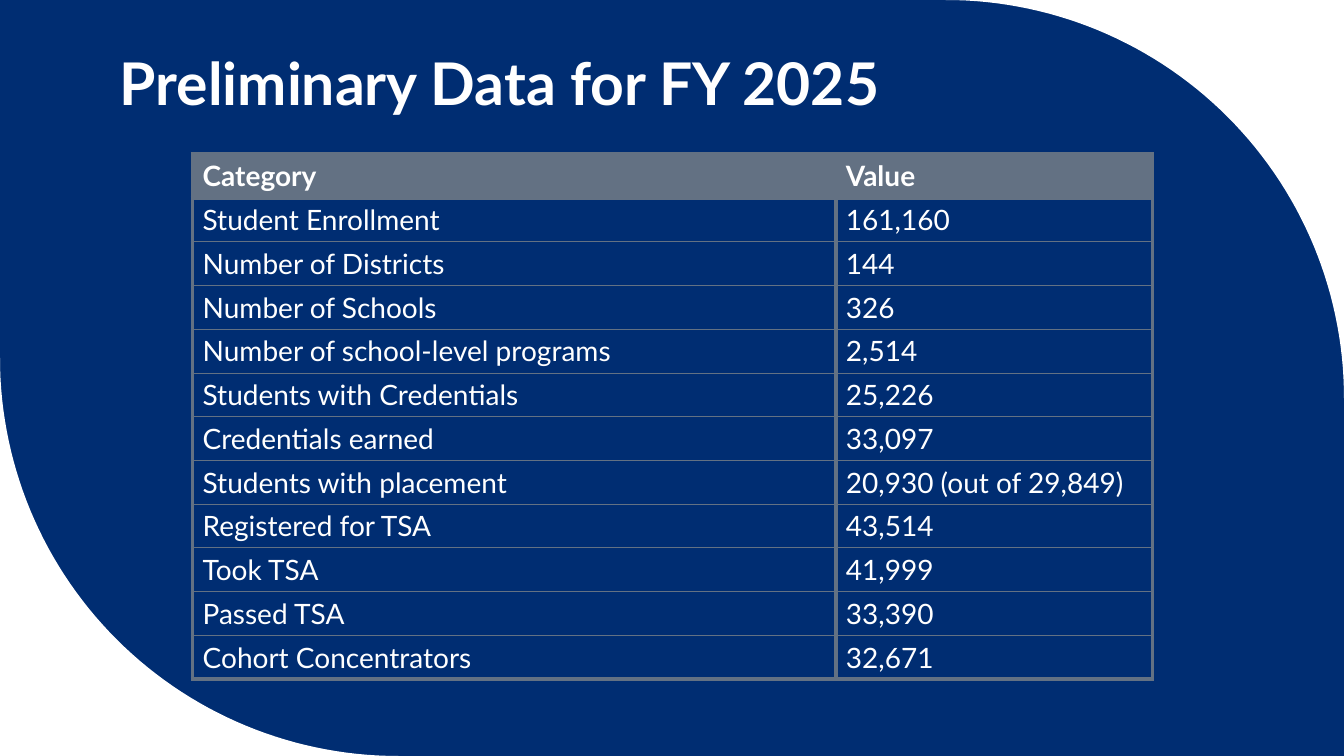
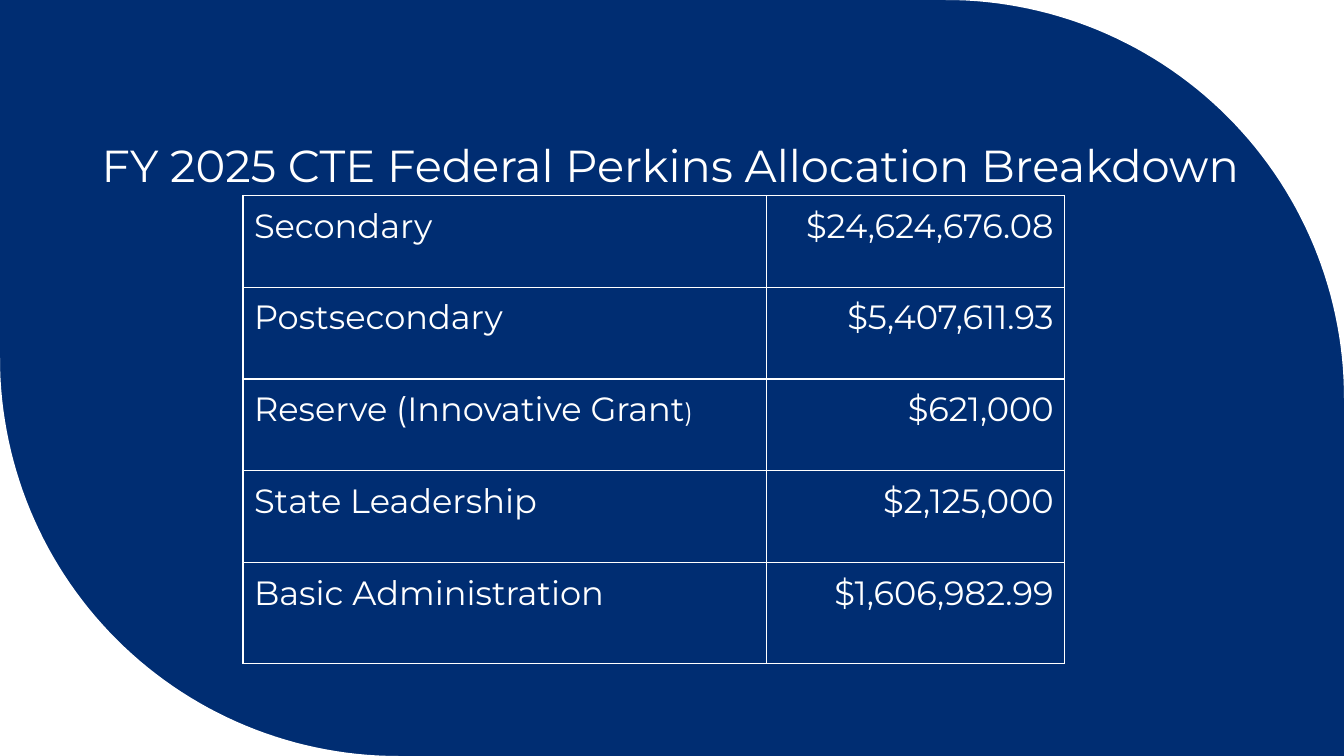
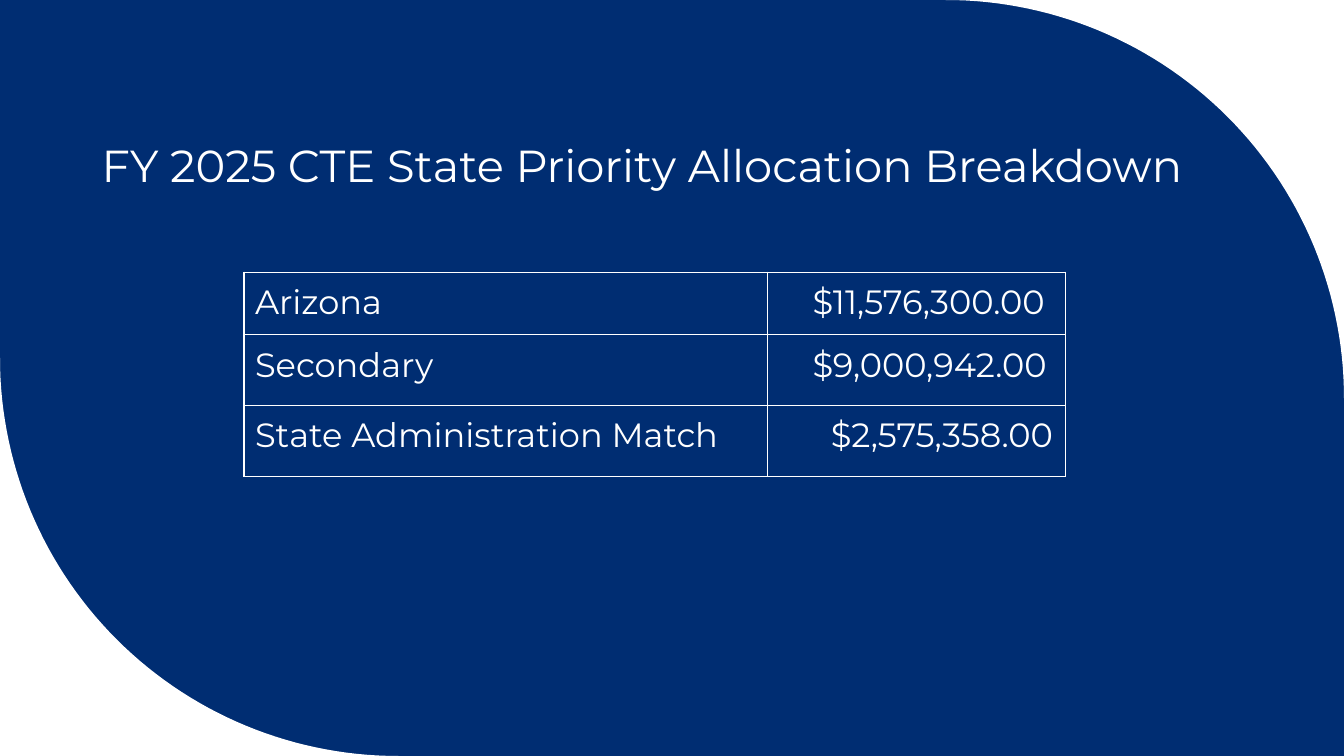
import math

from lxml import etree
from pptx import Presentation
from pptx.dml.color import RGBColor
from pptx.enum.text import MSO_ANCHOR, PP_ALIGN
from pptx.oxml.ns import qn
from pptx.util import Inches, Pt

NAVY = RGBColor(0x00, 0x2D, 0x72)
SLATE = RGBColor(0x63, 0x71, 0x83)
WHITE = RGBColor(0xFF, 0xFF, 0xFF)

LEFT, RIGHT = PP_ALIGN.LEFT, PP_ALIGN.RIGHT
BOTTOM = MSO_ANCHOR.BOTTOM

WIDTH, HEIGHT = 13.33, 7.5
CORNER_RADIUS = 3.95
ARC_STEPS = 60

SUMMARY_TITLE = {"name": "Lato", "size": Pt(42), "bold": True}
ALLOCATION_TITLE = {"name": "Montserrat", "size": Pt(32), "bold": False}
SUMMARY_HEADER = {"name": "Lato", "size": Pt(20), "bold": True}
SUMMARY_TEXT = {"name": "Lato", "size": Pt(20), "bold": False}
ALLOCATION_TEXT = {"name": "Montserrat", "size": Pt(24), "bold": False}

ALLOCATION_TITLE_BOX = (0.91, 0.08, 11.82, 1.87)
ALLOCATION_COLUMNS = (5.19, 2.96)
ALLOCATION_MARGINS = {
    "margin_left": Inches(0.11),
    "margin_right": Inches(0.11),
    "margin_top": Inches(0.06),
    "margin_bottom": Inches(0.06),
}

SUMMARY = [
    ("Category", "Value"),
    ("Student Enrollment", "161,160"),
    ("Number of Districts", "144"),
    ("Number of Schools", "326"),
    ("Number of school-level programs", "2,514"),
    ("Students with Credentials", "25,226"),
    ("Credentials earned", "33,097"),
    ("Students with placement", "20,930 (out of 29,849)"),
    ("Registered for TSA", "43,514"),
    ("Took TSA", "41,999"),
    ("Passed TSA", "33,390"),
    ("Cohort Concentrators", "32,671"),
]
FEDERAL = [
    ("Secondary", "$24,624,676.08"),
    ("Postsecondary", "$5,407,611.93"),
    ("Reserve (Innovative Grant", "$621,000"),
    ("State Leadership", "$2,125,000"),
    ("Basic Administration", "$1,606,982.99"),
]
STATE = [
    ("Arizona", "$11,576,300.00"),
    ("Secondary", "$9,000,942.00"),
    ("State Administration Match", "$2,575,358.00"),
]
STATE_INDENTS = (0.45, 0.45, 0.63)


def apply(target, values):
    for name, value in values.items():
        setattr(target, name, value)


def set_font(font, values):
    apply(font, values)
    font.color.rgb = WHITE


def set_borders(cell, color, widths):
    """Draw the cell's edges; widths are points for left, right, top, bottom."""
    properties = cell._tc.get_or_add_tcPr()
    for position, (side, width) in enumerate(zip("LRTB", widths)):
        line = etree.Element(qn(f"a:ln{side}"), w=str(Pt(width)))
        fill = etree.SubElement(line, qn("a:solidFill"))
        etree.SubElement(fill, qn("a:srgbClr"), val=str(color))
        properties.insert(position, line)


class Deck:
    def __init__(self):
        self.prs = Presentation()
        self.prs.slide_width = Inches(WIDTH)
        self.prs.slide_height = Inches(HEIGHT)
        background = self.prs.slide_master.background.fill
        background.solid()
        background.fore_color.rgb = NAVY

    def new_slide(self):
        self.slide = self.prs.slides.add_slide(self.prs.slide_layouts[6])
        arc = []
        for step in range(ARC_STEPS + 1):
            angle = math.pi / 2 * step / ARC_STEPS
            arc.append((WIDTH - CORNER_RADIUS * (1 - math.sin(angle)),
                        CORNER_RADIUS * (1 - math.cos(angle))))
        top_right = [(WIDTH, 0)] + arc
        self.corner(top_right)
        self.corner([(WIDTH - x, HEIGHT - y) for x, y in top_right])

    def corner(self, points):
        outline = [(Inches(x), Inches(y)) for x, y in points]
        builder = self.slide.shapes.build_freeform(*outline[0])
        builder.add_line_segments(outline[1:], close=True)
        shape = builder.convert_to_shape()
        shape.shadow.inherit = False
        shape.fill.solid()
        shape.fill.fore_color.rgb = WHITE
        shape.line.fill.background()

    def title(self, text, box, font):
        frame = self.slide.shapes.add_textbox(*map(Inches, box)).text_frame
        apply(frame, {"word_wrap": True, "vertical_anchor": BOTTOM})
        paragraph = frame.paragraphs[0]
        paragraph.text = text
        paragraph.line_spacing = 0.8
        set_font(paragraph.font, font)

    def table(self, rows, corner, columns, heights, font, color, frame, rule,
              header=None, margins=None, line_spacing=None, value_align=LEFT):
        """Add a table with frame-wide edges and rule-wide row lines, in points."""
        sizes = (sum(columns), sum(heights))
        table = self.slide.shapes.add_table(
            len(rows), len(columns), *map(Inches, corner + sizes)).table
        apply(table, {"first_row": header is not None, "horz_banding": False})
        for column, width in zip(table.columns, columns):
            column.width = Inches(width)
        for row, height in zip(table.rows, heights):
            row.height = Inches(height)

        edges = [frame] + [rule] * (len(rows) - 1) + [frame]
        if header:
            edges[1] = frame
        for r, texts in enumerate(rows):
            is_header = header is not None and r == 0
            for c, text in enumerate(texts):
                cell = table.cell(r, c)
                if is_header:
                    cell.fill.solid()
                    cell.fill.fore_color.rgb = color
                else:
                    cell.fill.background()
                apply(cell, margins or {})
                set_borders(cell, color, (frame, frame, edges[r], edges[r + 1]))
                paragraph = cell.text_frame.paragraphs[0]
                run = paragraph.add_run()
                run.text = text
                set_font(run.font, header if is_header else font)
                paragraph.line_spacing = line_spacing
                paragraph.alignment = value_align if c else LEFT
        return table

    def allocation(self, title, rows, corner, heights, value_align):
        self.new_slide()
        self.title(title, ALLOCATION_TITLE_BOX, ALLOCATION_TITLE)
        return self.table(rows, corner, ALLOCATION_COLUMNS, heights,
                          ALLOCATION_TEXT, WHITE, frame=1, rule=1,
                          margins=ALLOCATION_MARGINS, line_spacing=Pt(32.2),
                          value_align=value_align)


def main():
    deck = Deck()

    deck.new_slide()
    deck.title("Preliminary Data for FY 2025", (1.09, 0.11, 10.69, 1.1),
               SUMMARY_TITLE)
    deck.table(SUMMARY, (1.91, 1.53), (6.38, 3.14), [0.43] * len(SUMMARY),
               SUMMARY_TEXT, SLATE, frame=3, rule=0.5, header=SUMMARY_HEADER)

    federal = deck.allocation("FY 2025 CTE Federal Perkins Allocation Breakdown",
                              FEDERAL, (2.41, 1.94), [0.91] * 4 + [1.0], RIGHT)
    closing_bracket = federal.cell(2, 0).text_frame.paragraphs[0].add_run()
    closing_bracket.text = ")"
    set_font(closing_bracket.font, {**ALLOCATION_TEXT, "size": Pt(18)})

    state = deck.allocation("FY 2025 CTE State Priority Allocation Breakdown",
                            STATE, (2.42, 2.7), [0.62, 0.7, 0.71], LEFT)
    for r, indent in enumerate(STATE_INDENTS):
        state.cell(r, 1).margin_left = Inches(indent)

    deck.prs.save("out.pptx")


if __name__ == "__main__":
    main()
